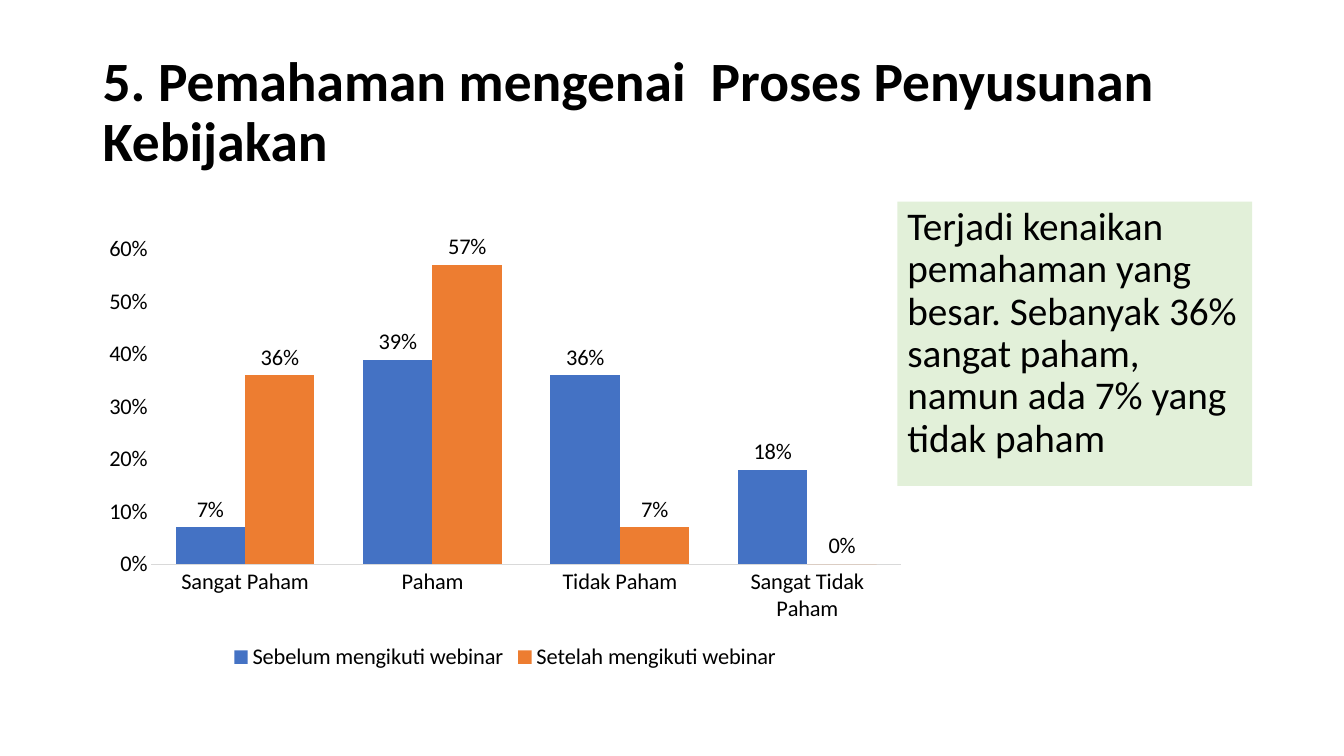
from pptx import Presentation
from pptx.chart.data import CategoryChartData
from pptx.dml.color import RGBColor
from pptx.enum.chart import XL_CHART_TYPE, XL_LABEL_POSITION, XL_LEGEND_POSITION, XL_TICK_MARK
from pptx.enum.text import MSO_ANCHOR
from pptx.util import Inches, Pt

FONT = "Calibri"
BLACK = "000000"
CATS = ["Sangat Paham", "Paham", "Tidak Paham", "Sangat Tidak Paham"]
SERIES = [
    ("Sebelum mengikuti webinar", "4472C4", [0.07, 0.39, 0.36, 0.18]),
    ("Setelah mengikuti webinar", "ED7D31", [0.36, 0.57, 0.07, 0]),
]


def color(code):
    """Turn a hex string into a colour."""
    return RGBColor.from_string(code)


def style(font, size, bold=False):
    """Set the face, size, weight and colour of a font."""
    font.name = FONT
    font.size = Pt(size)
    font.bold = bold
    font.color.rgb = color(BLACK)


def add_text(slide, box, words, size, bold=False, anchor=MSO_ANCHOR.TOP, fill=None):
    """Place a wrapped paragraph in a box, filled if a colour is given."""
    shape = slide.shapes.add_textbox(*map(Inches, box))
    if fill:
        shape.fill.solid()
        shape.fill.fore_color.rgb = color(fill)
    frame = shape.text_frame
    frame.word_wrap = True
    frame.vertical_anchor = anchor
    para = frame.paragraphs[0]
    para.line_spacing = 0.9
    run = para.add_run()
    run.text = words
    style(run.font, size, bold)


def add_bars(slide, box):
    """Place the column chart of answers before and after the webinar."""
    data = CategoryChartData(number_format="0%")
    data.categories = CATS
    for name, _, values in SERIES:
        data.add_series(name, values)
    kind = XL_CHART_TYPE.COLUMN_CLUSTERED
    chart = slide.shapes.add_chart(kind, *map(Inches, box), data).chart
    style(chart.font, 16)
    chart.has_title = False
    chart.has_legend = True
    chart.legend.position = XL_LEGEND_POSITION.BOTTOM
    chart.legend.include_in_layout = False
    style(chart.legend.font, 16)

    for axis in (chart.category_axis, chart.value_axis):
        axis.major_tick_mark = axis.minor_tick_mark = XL_TICK_MARK.NONE
        axis.has_major_gridlines = False
        style(axis.tick_labels.font, 16)
    base = chart.category_axis.format.line
    base.color.rgb = color("D9D9D9")
    base.width = Pt(0.75)
    scale = chart.value_axis
    scale.minimum_scale, scale.maximum_scale, scale.major_unit = 0, 0.6, 0.1
    scale.format.line.fill.background()
    scale.tick_labels.number_format = "0%"
    scale.tick_labels.number_format_is_linked = False

    plot = chart.plots[0]
    plot.gap_width = 70
    plot.overlap = 0
    plot.vary_by_categories = False
    for series, (_, code, _) in zip(plot.series, SERIES):
        series.format.fill.solid()
        series.format.fill.fore_color.rgb = color(code)
        labels = series.data_labels
        labels.show_value = True
        labels.position = XL_LABEL_POSITION.OUTSIDE_END
        labels.number_format = "0%"
        labels.number_format_is_linked = False
        style(labels.font, 16)


def main():
    """Build the slide and save it."""
    deck = Presentation()
    deck.slide_width, deck.slide_height = Inches(13.33), Inches(7.5)
    slide = deck.slides.add_slide(deck.slide_layouts[6])
    add_text(slide, (0.92, 0.4, 11.5, 1.45),
             "5. Pemahaman mengenai  Proses Penyusunan Kebijakan",
             39.6, bold=True, anchor=MSO_ANCHOR.MIDDLE)
    add_bars(slide, (0.92, 2.25, 8.18, 4.45))
    add_text(slide, (8.9, 2, 3.52, 2.82),
             "Terjadi kenaikan pemahaman yang besar. Sebanyak 36% sangat paham, "
             "namun ada 7% yang tidak paham", 28, fill="E2F0D9")
    deck.save("out.pptx")


if __name__ == "__main__":
    main()
